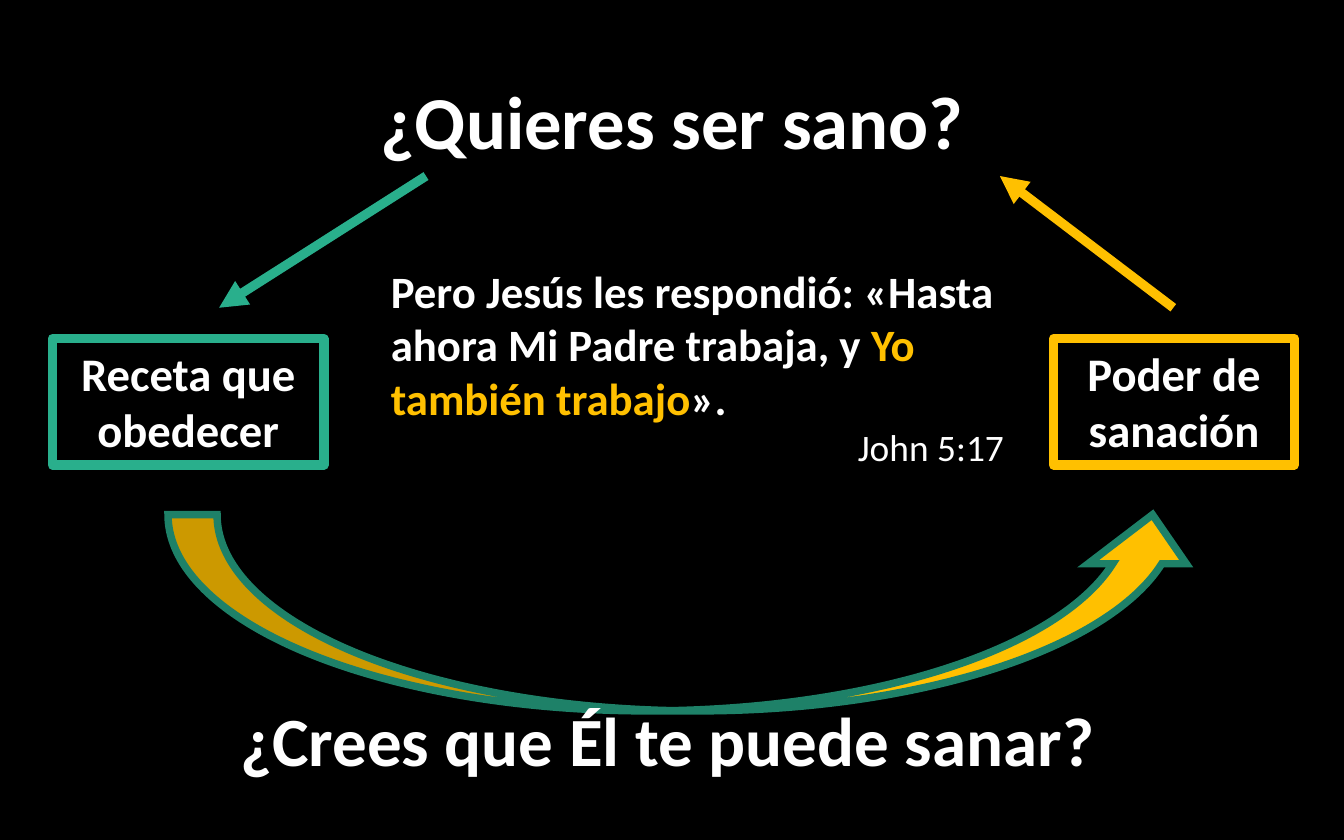
from dataclasses import dataclass
from typing import NamedTuple

from lxml import etree
from pptx import Presentation
from pptx.dml.color import RGBColor
from pptx.enum.shapes import MSO_CONNECTOR as CONN, MSO_SHAPE as SHAPE
from pptx.enum.text import MSO_ANCHOR as ANCHOR, PP_ALIGN as ALIGN
from pptx.oxml.ns import qn
from pptx.util import Inches, Pt


@dataclass(frozen=True)
class Theme:
    font: str = "Calibri"
    black: str = "000000"
    white: str = "FFFFFF"
    green: str = "29AF8C"
    dark_green: str = "1E8168"
    gold: str = "FFC000"
    title: int = 40
    question: int = 37
    label: int = 25
    verse: int = 24
    citation: int = 20
    line: int = 5
    curve_line: int = 4


T = Theme()


class Box(NamedTuple):
    left: float
    top: float
    width: float
    height: float

    def lengths(self) -> list:
        return [Inches(v) for v in self]


class Label(NamedTuple):
    text: str
    box: Box
    color: str


class Arrow(NamedTuple):
    start: tuple[float, float]
    end: tuple[float, float]
    color: str


LABELS = [
    Label("Receta que obedecer", Box(0.39, 2.52, 2.02, 0.94), T.green),
    Label("Poder de sanación", Box(7.84, 2.52, 1.79, 0.94), T.gold),
]
ARROWS = [
    Arrow((3.17, 1.31), (1.63, 2.29), T.green),
    Arrow((8.73, 2.29), (7.44, 1.31), T.gold),
]


def rgb(color: str) -> RGBColor:
    return RGBColor.from_string(color)


def add_run(p, text: str, *, size: int, color: str = T.white, bold: bool = True) -> None:
    r = p.add_run()
    r.text = text
    r.font.name = T.font
    r.font.size = Pt(size)
    r.font.bold = bold
    r.font.color.rgb = rgb(color)


def add_text_box(slide, box: Box, anchor=ANCHOR.TOP):
    tf = slide.shapes.add_textbox(*box.lengths()).text_frame
    tf.word_wrap = True
    tf.vertical_anchor = anchor
    return tf


def set_line(line, color: str, width: int) -> None:
    line.color.rgb = rgb(color)
    line.width = Pt(width)


def add_heading(slide, text: str, box: Box, size: int) -> None:
    p = add_text_box(slide, box, ANCHOR.MIDDLE).paragraphs[0]
    p.alignment = ALIGN.CENTER
    p.line_spacing = 0.9
    add_run(p, text, size=size)


def add_label(slide, label: Label) -> None:
    sp = slide.shapes.add_shape(SHAPE.RECTANGLE, *label.box.lengths())
    sp.shadow.inherit = False
    sp.fill.background()
    set_line(sp.line, label.color, T.line)
    tf = sp.text_frame
    tf.word_wrap = True
    tf.vertical_anchor = ANCHOR.TOP
    p = tf.paragraphs[0]
    p.alignment = ALIGN.CENTER
    add_run(p, label.text, size=T.label)


def add_verse(slide) -> None:
    tf = add_text_box(slide, Box(2.81, 1.91, 4.76, 1.65))
    p = tf.paragraphs[0]
    add_run(p, "Pero Jesús les respondió: «Hasta ahora Mi Padre trabaja, y ", size=T.verse)
    add_run(p, "Yo también trabajo", size=T.verse, color=T.gold)
    add_run(p, "».", size=T.verse)
    p = tf.add_paragraph()
    p.alignment = ALIGN.RIGHT
    add_run(p, "John 5:17", size=T.citation, bold=False)


def add_arrow(slide, arrow: Arrow) -> None:
    ends = [Inches(v) for v in (*arrow.start, *arrow.end)]
    cx = slide.shapes.add_connector(CONN.STRAIGHT, *ends)
    set_line(cx.line, arrow.color, T.line)
    etree.SubElement(cx.line._get_or_add_ln(), qn("a:tailEnd"), type="triangle")
    etree.SubElement(cx._element.spPr, qn("a:effectLst"))


def add_curve(slide, box: Box) -> None:
    sp = slide.shapes.add_shape(SHAPE.CURVED_UP_ARROW, *box.lengths())
    sp.shadow.inherit = False
    sp.fill.solid()
    sp.fill.fore_color.rgb = rgb(T.gold)
    set_line(sp.line, T.dark_green, T.curve_line)
    etree.SubElement(sp.line._get_or_add_ln(), qn("a:miter"), lim="800000")


def main() -> None:
    prs = Presentation()
    prs.slide_width, prs.slide_height = Inches(10), Inches(6.25)
    s = prs.slides.add_slide(prs.slide_layouts[6])
    s.background.fill.solid()
    s.background.fill.fore_color.rgb = rgb(T.black)

    add_heading(s, "¿Quieres ser sano?", Box(0.69, 0.33, 8.62, 1.21), T.title)
    for label in LABELS:
        add_label(s, label)
    add_verse(s)
    for arrow in ARROWS:
        add_arrow(s, arrow)
    add_curve(s, Box(1.25, 3.83, 7.69, 1.46))
    add_heading(s, "¿Crees que Él te puede sanar?", Box(0.31, 5.18, 9.31, 0.72), T.question)
    prs.save("out.pptx")


if __name__ == "__main__":
    main()
